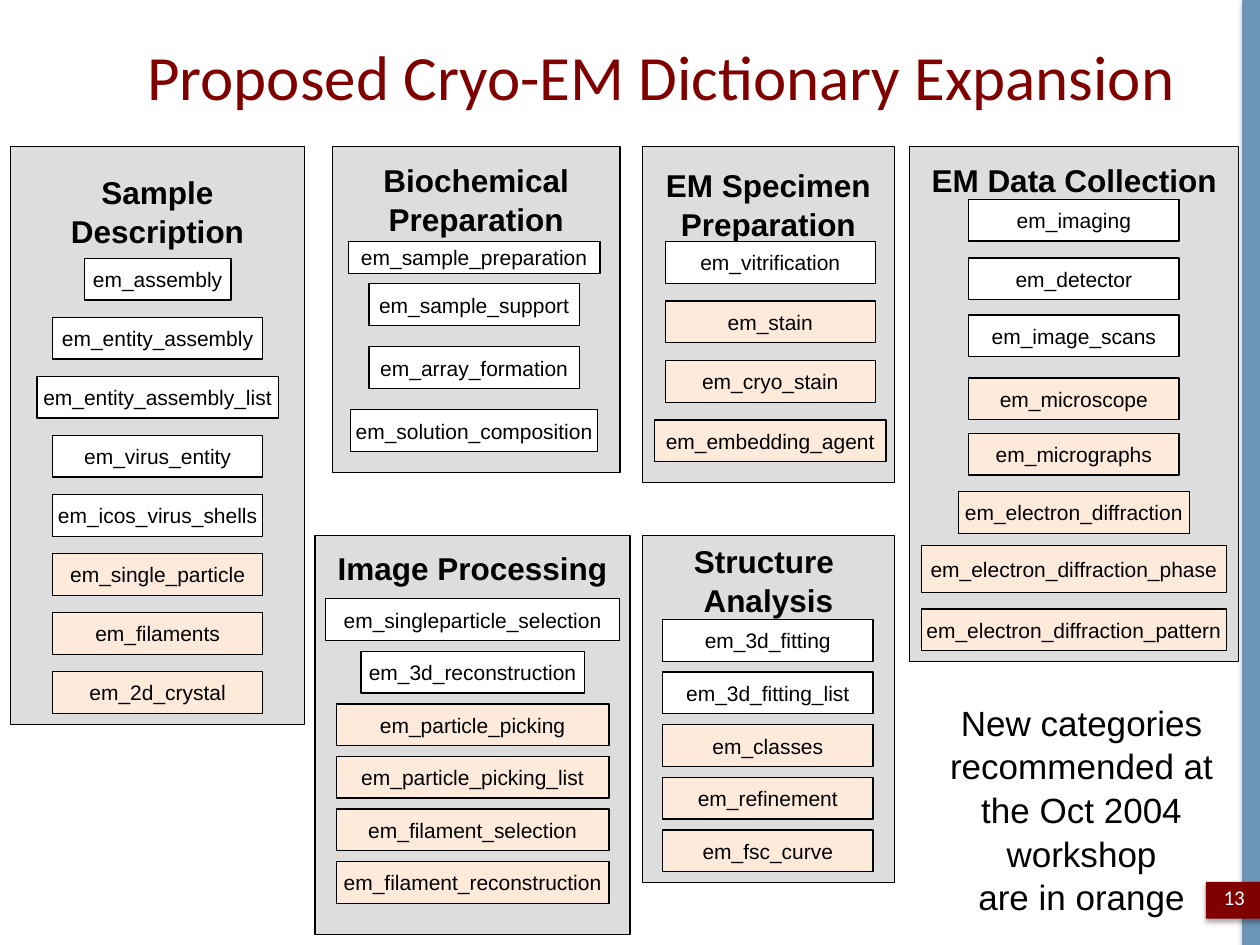
from lxml import etree
from pptx import Presentation
from pptx import util as u
from pptx.dml.color import RGBColor
from pptx.enum import shapes, text
from pptx.oxml import ns

Cm, Pt = u.Cm, u.Pt

THEME = dict(
    title="800000", badge="800000", strip="6C95B6", panel="DDDDDD",
    existing="FFFFFF", new="FDEADA", ink="000000", light="FFFFFF",
    head_font="Calibri", body_font="Arial",
    title_size=36, note_size=20, panel_size=18, box_size=12, line=0.75,
)
BOX_W, BOX_H = 4.24, 0.84
LEADING = 1.04


def steps(first, pitch, count):
    return [first + pitch * i for i in range(count)]


# Content: panel frame (left, top, width, height), heading inset,
# centre line and tops of the boxes, all in cm
TITLE = "Proposed Cryo-EM Dictionary Expansion"
NOTE = ["New categories", "recommended at", "the Oct 2004 workshop",
        "are in orange"]
PANELS = [
    dict(heading=["Biochemical", "Preparation"], frame=(6.7, 2.96, 5.8, 6.56),
         inset=0.25, centre=9.56, tops=[4.87, 5.72, 6.99, 8.26],
         existing=["em_sample_preparation", "em_sample_support",
                   "em_array_formation", "em_solution_composition"],
         new=[]),
    dict(heading=["EM Specimen", "Preparation"],
         frame=(12.95, 2.96, 5.08, 6.77),
         inset=0.36, centre=15.53, tops=steps(4.87, 1.2, 4),
         existing=["em_vitrification"],
         new=["em_stain", "em_cryo_stain", "em_embedding_agent"]),
    dict(heading=["EM Data Collection"], frame=(18.34, 2.96, 6.63, 10.37),
         inset=0.25, centre=21.65,
         tops=[4.02, 5.2, 6.35, 7.62, 8.74, 9.91, 11, 12.28],
         existing=["em_imaging", "em_detector", "em_image_scans"],
         new=["em_microscope", "em_micrographs", "em_electron_diffraction",
              "em_electron_diffraction_phase",
              "em_electron_diffraction_pattern"]),
    dict(heading=["Structure ", "Analysis"], frame=(12.95, 10.8, 5.08, 6.99),
         inset=0.1, centre=15.48, tops=steps(12.49, 1.06, 5),
         existing=["em_3d_fitting", "em_3d_fitting_list"],
         new=["em_classes", "em_refinement", "em_fsc_curve"]),
    dict(heading=["Image Processing"], frame=(6.35, 10.8, 6.35, 8.04),
         inset=0.23, centre=9.53, tops=steps(12.07, 1.06, 6),
         existing=["em_singleparticle_selection", "em_3d_reconstruction"],
         new=["em_particle_picking", "em_particle_picking_list",
              "em_filament_selection", "em_filament_reconstruction"]),
    dict(heading=["Sample", "Description"], frame=(0.21, 2.96, 5.93, 11.64),
         inset=0.5, centre=3.18, tops=steps(5.21, 1.19, 8),
         existing=["em_assembly", "em_entity_assembly",
                   "em_entity_assembly_list", "em_virus_entity",
                   "em_icos_virus_shells"],
         new=["em_single_particle", "em_filaments", "em_2d_crystal"]),
]

# Boxes that differ from the standard size: (width, height)
SIZES = {
    "em_sample_preparation": (5.08, 0.64),
    "em_solution_composition": (4.98, BOX_H),
    "em_embedding_agent": (4.66, BOX_H),
    "em_electron_diffraction": (4.66, BOX_H),
    "em_electron_diffraction_phase": (6.15, 0.95),
    "em_electron_diffraction_pattern": (6.15, BOX_H),
    "em_singleparticle_selection": (5.93, BOX_H),
    "em_3d_reconstruction": (4.5, BOX_H),
    "em_assembly": (2.96, BOX_H),
    "em_entity_assembly_list": (4.87, BOX_H),
    **dict.fromkeys(["em_particle_picking", "em_particle_picking_list",
                     "em_filament_selection", "em_filament_reconstruction"],
                    (5.5, BOX_H)),
}

prs = Presentation()
prs.slide_width, prs.slide_height = Cm(25.4), Cm(19.05)
s = prs.slides.add_slide(prs.slide_layouts[6])


def write(sp, lines, size, font=THEME["body_font"], color=THEME["ink"],
          bold=False, align=text.PP_ALIGN.CENTER,
          anchor=text.MSO_ANCHOR.MIDDLE, wrap=False, inset=0.13, leading=None):
    tf = sp.text_frame
    tf.word_wrap, tf.vertical_anchor = wrap, anchor
    tf.margin_top = Cm(inset)
    for i, line in enumerate(lines):
        p = tf.add_paragraph() if i else tf.paragraphs[0]
        p.alignment = align
        if leading:
            p.line_spacing = leading
        r = p.add_run()
        r.text = line
        r.font.name, r.font.size, r.font.bold = font, Pt(size), bold
        r.font.color.rgb = RGBColor.from_string(color)


def rect(frame, fill, outlined=True):
    sp = s.shapes.add_shape(shapes.MSO_SHAPE.RECTANGLE, *map(Cm, frame))
    sp.shadow.inherit = False
    sp.fill.solid()
    sp.fill.fore_color.rgb = RGBColor.from_string(fill)
    if outlined:
        sp.line.color.rgb = RGBColor.from_string(THEME["ink"])
        sp.line.width = Pt(THEME["line"])
    else:
        sp.line.fill.background()
    return sp


def label(frame, lines, size, **fmt):
    write(s.shapes.add_textbox(*map(Cm, frame)), lines, size, **fmt)


def drop_shadow(sp):
    effects = sp.element.spPr.find(ns.qn("a:effectLst"))
    shadow = etree.SubElement(effects, ns.qn("a:outerShdw"), blurRad="39370",
                              dist="22860", dir="5400000", rotWithShape="0")
    clr = etree.SubElement(shadow, ns.qn("a:srgbClr"), val=THEME["ink"])
    etree.SubElement(clr, ns.qn("a:alpha"), val="35000")


# Side strip, page number and title
for frame, fill in [((25.04, 0, 0.36, 19.05), THEME["strip"]),
                    ((24.31, 17.78, 1.22, 0.74), THEME["badge"])]:
    drop_shadow(rect(frame, fill, outlined=False))
label((24.31, 17.58, 1.14, 1.02), ["13"], THEME["box_size"],
      font=THEME["head_font"], color=THEME["light"])
label((2.72, 0, 22.68, 3.02), [TITLE], THEME["title_size"],
      font=THEME["head_font"], color=THEME["title"],
      align=text.PP_ALIGN.LEFT, wrap=True)

# Panels with their category boxes
for panel in PANELS:
    write(rect(panel["frame"], THEME["panel"]), panel["heading"],
          THEME["panel_size"], bold=True, anchor=text.MSO_ANCHOR.TOP,
          inset=panel["inset"], leading=LEADING)
    boxes = [(name, kind) for kind in ("existing", "new")
             for name in panel[kind]]
    for (name, kind), top in zip(boxes, panel["tops"]):
        w, h = SIZES.get(name, (BOX_W, BOX_H))
        sp = rect((panel["centre"] - w / 2, top, w, h), THEME[kind])
        write(sp, [name], THEME["box_size"])

# Colour note
label((18.21, 13.97, 7.19, 4.5), NOTE, THEME["note_size"], wrap=True,
      anchor=text.MSO_ANCHOR.TOP, leading=LEADING)

prs.save("out.pptx")
